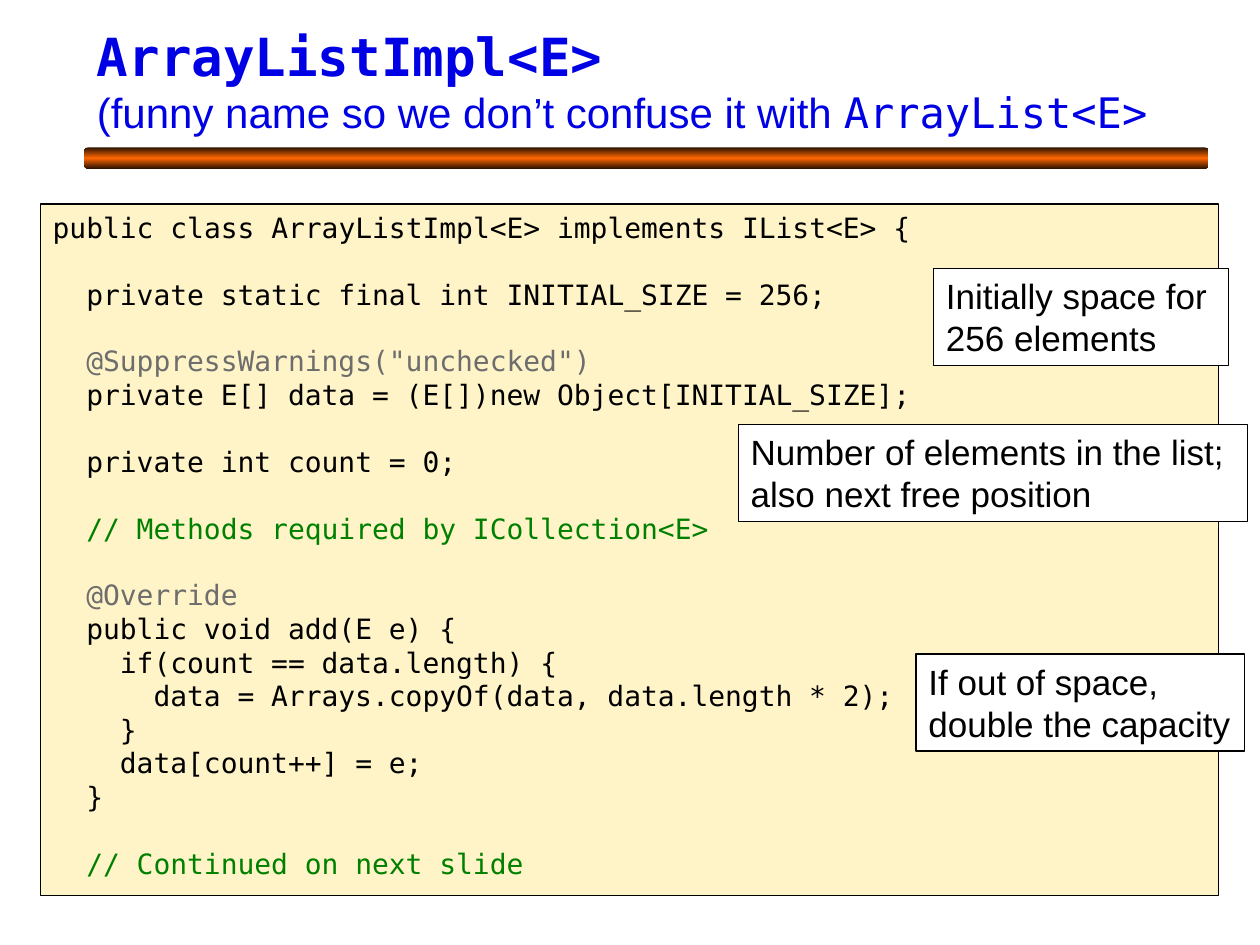
from copy import deepcopy
from collections import namedtuple

from pptx import Presentation
from pptx.dml.color import RGBColor
from pptx.enum.shapes import MSO_SHAPE as Shape
from pptx.enum.text import MSO_ANCHOR as Anchor, PP_ALIGN as Align
from pptx.oxml.ns import qn
from pptx.util import Inches, Pt

# Grid of 100 columns by 75 rows on a 10 x 7.5 inch slide
COLUMNS, ROWS = 100, 75
UNIT = Inches(0.1)
SANS, MONO = "Arial", "DejaVu Sans Mono"
BLACK, WHITE, BLUE = "000000", "FFFFFF", "0000E5"
GREY, GREEN, CREAM = "6D6D6D", "008000", "FFF4C7"
DARK, ORANGE = "2A1100", "FF6600"
CODE_SIZE = 16
INDENT = Pt(CODE_SIZE * 0.6)  # width of one monospaced character
BLANK_LINE = Pt(19)

Box = namedtuple("Box", "left top width height")

# Groups are separated by one line; each line is (indent in characters, code)
CODE = [
    [(0, "public class ArrayListImpl<E> implements IList<E> {")],
    [(2, "private static final int INITIAL_SIZE = 256;")],
    [(2, '@SuppressWarnings("unchecked")'),
     (2, "private E[] data = (E[])new Object[INITIAL_SIZE];")],
    [(2, "private int count = 0;")],
    [(2, "// Methods required by ICollection<E>")],
    [(2, "@Override"),
     (2, "public void add(E e) {"),
     (4, "if(count == data.length) {"),
     (6, "data = Arrays.copyOf(data, data.length * 2);"),
     (4, "}"),
     (4, "data[count++] = e;"),
     (2, "}")],
    [(2, "// Continued on next slide")],
]

CALLOUTS = [
    (Box(74.1, 21.3, 23.4, 7.7), "Initially space for 256 elements"),
    (Box(58.6, 33.7, 40.4, 7.7),
     "Number of elements in the list; also next free position"),
    (Box(72.7, 51.9, 26.1, 7.7), "If out of space, double the capacity"),
]


def rgb(color):
    return RGBColor.from_string(color)


def emu(box):
    return [round(length * UNIT) for length in box]


def write(paragraph, text, font=SANS, size=20, color=BLACK, bold=False):
    run = paragraph.add_run()
    run.text = text
    run.font.name, run.font.size, run.font.bold = font, Pt(size), bold
    run.font.color.rgb = rgb(color)


def panel(slide, box, fill):
    """Add an outlined rectangle and return its text frame."""
    shape = slide.shapes.add_shape(Shape.RECTANGLE, *emu(box))
    shape.shadow.inherit = False
    shape.fill.solid()
    shape.fill.fore_color.rgb = rgb(fill)
    shape.line.color.rgb = rgb(BLACK)
    shape.line.width = Pt(0.75)
    frame = shape.text_frame
    frame.word_wrap = True
    frame.vertical_anchor = Anchor.TOP
    frame.paragraphs[0].alignment = Align.LEFT
    return frame


def divider(slide, box):
    bar = slide.shapes.add_shape(Shape.ROUNDED_RECTANGLE, *emu(box))
    bar.shadow.inherit = False
    bar.line.fill.background()
    bar.fill.gradient()
    bar.fill.gradient_angle = 90
    stop_list = bar.fill.gradient_stops
    first = bar._element.spPr.find(".//" + qn("a:gs"))
    first.addnext(deepcopy(first))
    stop_list = bar.fill.gradient_stops
    for stop, position, color in zip(stop_list, (0, 0.5, 1), (DARK, ORANGE, DARK)):
        stop.position = position
        stop.color.rgb = rgb(color)


def header(slide, box):
    divider(slide, Box(box.left, box.top + 10.3, box.width, 1.7))
    title = slide.shapes.add_textbox(*emu(box._replace(height=10)))
    frame = title.text_frame
    frame.word_wrap = True
    frame.vertical_anchor = Anchor.MIDDLE
    heading = frame.paragraphs[0]
    write(heading, "ArrayListImpl<E>", font=MONO, size=30, color=BLUE, bold=True)
    heading.add_line_break()
    write(heading, "(funny name so we don’t confuse it with ", size=24, color=BLUE)
    write(heading, "ArrayList<E>", font=MONO, size=24, color=BLUE)


def code_color(code):
    return {"@": GREY, "/": GREEN}.get(code[0], BLACK)


def code_listing(slide, box):
    frame = panel(slide, box, CREAM)
    line = frame.paragraphs[0]
    for group_number, group in enumerate(CODE):
        for line_number, (indent, code) in enumerate(group):
            if group_number or line_number:
                line = frame.add_paragraph()
            line.alignment = Align.LEFT
            if group_number and not line_number:
                line.space_before = BLANK_LINE
            line._p.get_or_add_pPr().set("marL", str(round(indent * INDENT)))
            write(line, code, font=MONO, size=CODE_SIZE, color=code_color(code))


def callout(slide, box, text):
    write(panel(slide, box, WHITE).paragraphs[0], text)


def main():
    deck = Presentation()
    deck.slide_width, deck.slide_height = COLUMNS * UNIT, ROWS * UNIT
    slide = deck.slides.add_slide(deck.slide_layouts[6])
    header(slide, Box(6.7, 1.4, 89.2, 12))
    code_listing(slide, Box(3.2, 16.2, 93.5, 54.9))
    for box, text in CALLOUTS:
        callout(slide, box, text)
    deck.save("out.pptx")


if __name__ == "__main__":
    main()
